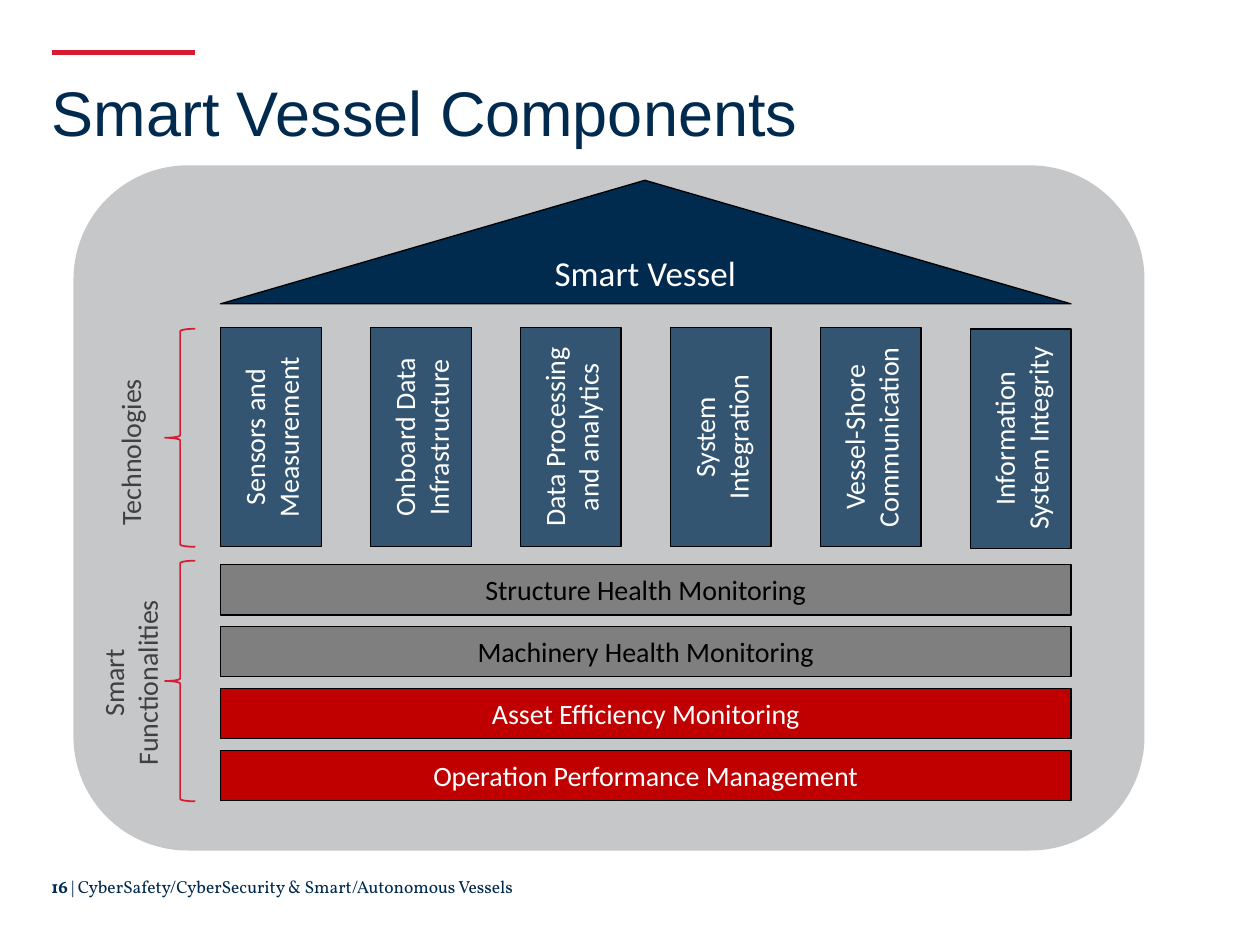
from pptx import Presentation
from pptx.dml.color import RGBColor
from pptx.enum.shapes import MSO_CONNECTOR, MSO_SHAPE as Shape
from pptx.enum.text import MSO_ANCHOR as Anchor, PP_ALIGN as Align
from pptx.oxml.ns import qn
from pptx.util import Pt
from lxml import etree

COLORS = {"navy": "002A4E", "steel": "335572", "panel": "C5C7C9", "gray": "7F7F7F",
          "red": "C00000", "accent": "DA1A32", "label": "404040",
          "black": "000000", "white": "FFFFFF"}


def add_text(shape, text, size, color, font="Calibri", align=Align.CENTER,
             anchor=Anchor.MIDDLE, vertical=False, bold=False):
    frame = shape.text_frame
    frame.word_wrap = True
    frame.vertical_anchor = anchor
    if vertical:
        frame._txBody.bodyPr.set("vert", "vert270")
        frame.margin_top = frame.margin_bottom = Pt(7.2)
    paragraph = frame.paragraphs[0]
    paragraph.alignment = align
    run = paragraph.add_run()
    run.text = text
    run.font.size = Pt(size)
    run.font.name = font
    run.font.bold = bold
    run.font.color.rgb = RGBColor.from_string(COLORS[color])


def add_block(kind, left, top, width, height, fill=None, line=None, line_width=0.75):
    shape = slide.shapes.add_shape(kind, Pt(left), Pt(top), Pt(width), Pt(height))
    shape.shadow.inherit = False
    if fill:
        shape.fill.solid()
        shape.fill.fore_color.rgb = RGBColor.from_string(COLORS[fill])
    else:
        shape.fill.background()
    if line:
        shape.line.color.rgb = RGBColor.from_string(COLORS[line])
        shape.line.width = Pt(line_width)
    else:
        shape.line.fill.background()
    return shape


presentation = Presentation()
presentation.slide_width, presentation.slide_height = Pt(720), Pt(540)
slide = presentation.slides.add_slide(presentation.slide_layouts[5])

title = slide.shapes.title
title.left, title.top, title.width, title.height = Pt(22.3), Pt(43.2), Pt(669), Pt(48.2)
add_text(title, "Smart Vessel Components", 36, "navy", "Arial", Align.LEFT, Anchor.TOP)
title.text_frame.paragraphs[0].line_spacing = 0.9

accent = slide.shapes.add_connector(MSO_CONNECTOR.STRAIGHT, Pt(30), Pt(30), Pt(111.6), Pt(30))
accent.line.color.rgb = RGBColor.from_string(COLORS["accent"])
accent.line.width = Pt(2.5)
etree.SubElement(accent._element.spPr, qn("a:effectLst"))

footer = slide.shapes.add_textbox(Pt(22.3), Pt(496.8), Pt(302.4), Pt(18.7))
for text, bold in (("16", True), (" | CyberSafety/CyberSecurity & Smart/Autonomous Vessels", False)):
    add_text(footer, text, 10, "navy", "Vollkorn", Align.LEFT, Anchor.TOP, bold=bold)

add_block(Shape.ROUNDED_RECTANGLE, 42, 94.5, 612, 391.5, "panel")

LEFT, WIDTH = 126, 486
roof = add_block(Shape.ISOSCELES_TRIANGLE, LEFT, 103, WIDTH, 70.6, "navy", "black")
roof.adjustments[0] = 0.499
add_text(roof, "Smart Vessel", 20, "white")

technologies = ["Sensors and Measurement", "Onboard Data Infrastructure",
                "Data Processing and analytics", "System Integration",
                "Vessel-Shore Communication", "Information System Integrity"]
PILLAR_WIDTH = 57.6
pillar_step = (WIDTH - PILLAR_WIDTH) / (len(technologies) - 1)
for index, name in enumerate(technologies):
    top = 188 if name == technologies[-1] else 187.2
    pillar = add_block(Shape.RECTANGLE, LEFT + index * pillar_step, top,
                       PILLAR_WIDTH, 125.3, "steel", "black")
    add_text(pillar, name, 16, "white", vertical=True)

functionalities = [("Structure Health Monitoring", "gray", "black"),
                   ("Machinery Health Monitoring", "gray", "black"),
                   ("Asset Efficiency Monitoring", "red", "white"),
                   ("Operation Performance Management", "red", "white")]
for index, (name, fill, color) in enumerate(functionalities):
    bar = add_block(Shape.RECTANGLE, LEFT, 322.6 + index * 35.4, WIDTH, 28.8, fill, "black")
    add_text(bar, name, 16, color)

groups = [("Technologies", 195.8, 125.3, 187.9, 124.6),
          ("Smart Functionalities", 323.3, 133.9, 320.4, 137.5)]
for name, label_top, label_height, brace_top, brace_height in groups:
    label = slide.shapes.add_textbox(Pt(45.4), Pt(label_top), Pt(57.6), Pt(label_height))
    add_text(label, name, 16, "label", vertical=True)
    add_block(Shape.LEFT_BRACE, 94.3, brace_top, 17.3, brace_height, line="accent", line_width=1)

presentation.save("out.pptx")
